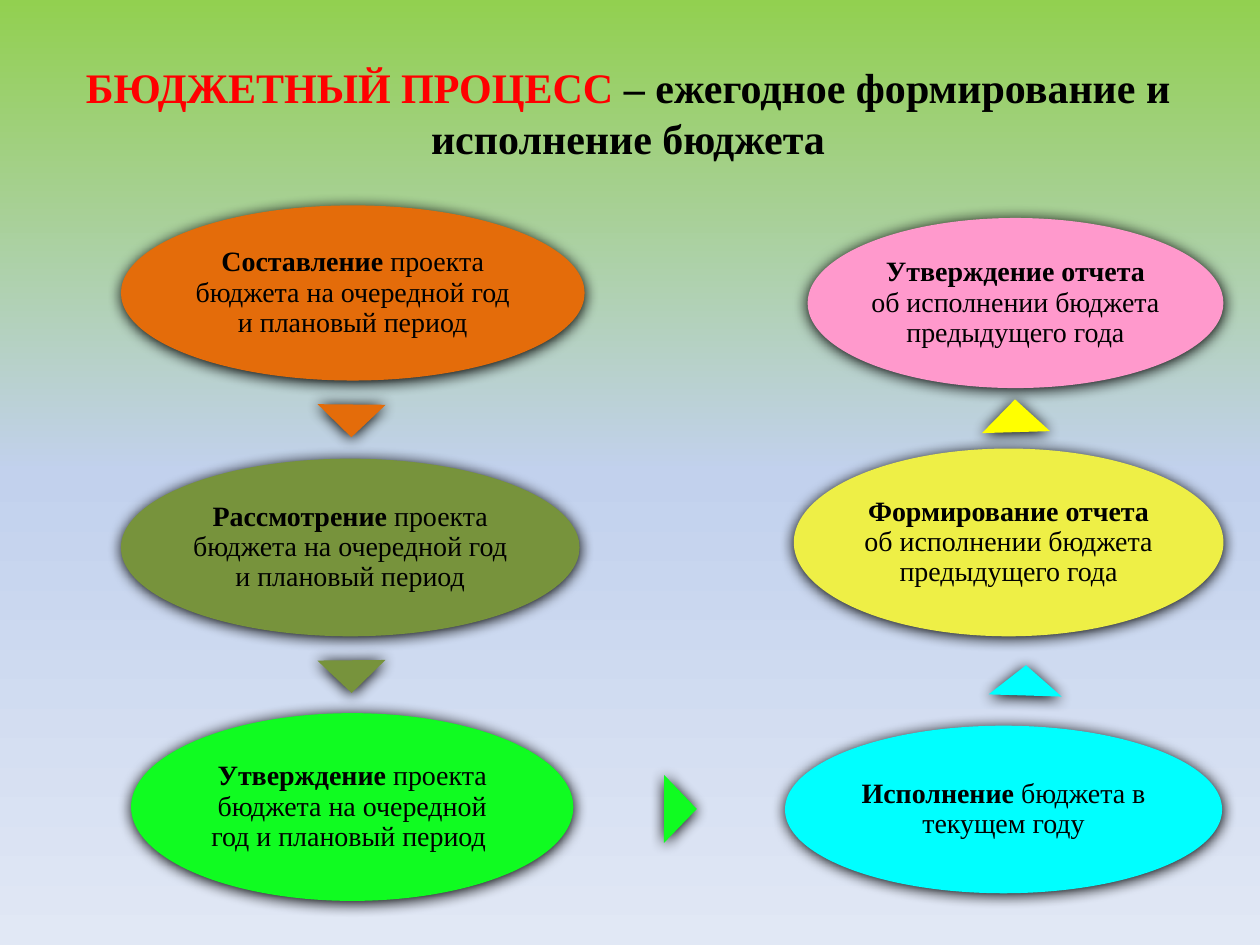
from dataclasses import dataclass

from lxml import etree
from pptx import Presentation
from pptx.dml.color import RGBColor
from pptx.enum.shapes import MSO_SHAPE
from pptx.enum.text import MSO_ANCHOR, MSO_AUTO_SIZE, PP_ALIGN
from pptx.oxml import parse_xml
from pptx.oxml.ns import qn
from pptx.util import Inches, Pt

OVAL = MSO_SHAPE.OVAL
ARROW = MSO_SHAPE.ISOSCELES_TRIANGLE
MIDDLE = MSO_ANCHOR.MIDDLE
CENTER = PP_ALIGN.CENTER
GROW = MSO_AUTO_SIZE.SHAPE_TO_FIT_TEXT
NS = "http://schemas.openxmlformats.org/drawingml/2006/main"


@dataclass(frozen=True)
class Theme:
    font: str = "Times New Roman"
    title: int = 24
    body: int = 16
    red: str = "FF0000"
    black: str = "000000"
    orange: str = "E46C0A"
    olive: str = "77933C"
    green: str = "10FC21"
    cyan: str = "00FFFF"
    lemon: str = "EEEF46"
    yellow: str = "FFFF00"
    pink: str = "FF99CC"
    sky: tuple = ((0, "92D050"), (50, "C2D1ED"), (100, "E1E8F5"))


THEME = Theme()

STAGES = [
    ((0.96, 1.63, 3.68, 1.39), THEME.orange,
     "Составление", " проекта бюджета на очередной год и плановый период"),
    ((0.96, 3.64, 3.64, 1.41), THEME.olive,
     "Рассмотрение ", "проекта бюджета на очередной год и плановый период"),
    ((1.04, 5.66, 3.51, 1.49), THEME.green,
     "Утверждение", " проекта бюджета на очередной год и плановый период "),
    ((6.23, 5.76, 3.47, 1.33), THEME.cyan,
     "Исполнение ", "бюджета в текущем году"),
    ((6.3, 3.56, 3.41, 1.49), THEME.lemon,
     "Формирование отчета ", "об исполнении бюджета предыдущего года"),
    ((6.41, 1.73, 3.3, 1.35), THEME.pink,
     "Утверждение отчета ", "об исполнении бюджета предыдущего года"),
]

ARROWS = [
    ((2.52, 3.21, 0.54, 0.26), 180.5, THEME.orange),
    ((2.52, 5.24, 0.54, 0.26), 179.5, THEME.olive),
    ((5.13, 6.29, 0.54, 0.26), 90.1, THEME.green),
    ((7.85, 5.28, 0.58, 0.24), 1.7, THEME.cyan),
    ((7.79, 3.17, 0.54, 0.26), 358.3, THEME.yellow),
]


def paint_sky(slide):
    fill = slide.background.fill
    fill.gradient()
    fill.gradient_angle = 270
    stops = slide.element.xpath(".//a:gsLst")[0]
    for stop in list(stops):
        stops.remove(stop)
    for place, color in THEME.sky:
        stop = etree.SubElement(stops, qn("a:gs"), pos=str(place * 1000))
        etree.SubElement(stop, qn("a:srgbClr"), val=color)


def add_run(para, text, size, color, bold):
    run = para.add_run()
    run.text = text
    font = run.font
    font.name = THEME.font
    font.size = Pt(size)
    font.bold = bold
    font.color.rgb = RGBColor.from_string(color)


def add_shade(shape):
    shape.shadow.inherit = False
    effects = shape.element.spPr.find(qn("a:effectLst"))
    effects.append(parse_xml(
        f'<a:outerShdw xmlns:a="{NS}" blurRad="{Pt(8.5)}" dist="{Pt(1)}" '
        'dir="5400000" algn="ctr" rotWithShape="0">'
        f'<a:srgbClr val="{THEME.black}"/></a:outerShdw>'))


def add_form(slide, kind, box, color):
    shape = slide.shapes.add_shape(kind, *map(Inches, box))
    shape.fill.solid()
    shape.fill.fore_color.rgb = RGBColor.from_string(color)
    shape.line.fill.background()
    add_shade(shape)
    return shape


def add_stage(slide, box, color, head, rest):
    frame = add_form(slide, OVAL, box, color).text_frame
    frame.word_wrap = True
    frame.vertical_anchor = MIDDLE
    frame.margin_left = frame.margin_right = Inches(0.02)
    frame.margin_top = frame.margin_bottom = Inches(0.02)
    para = frame.paragraphs[0]
    para.alignment = CENTER
    para.line_spacing = 0.9
    add_run(para, head, THEME.body, THEME.black, True)
    add_run(para, rest, THEME.body, THEME.black, False)


def add_arrow(slide, box, turn, color):
    add_form(slide, ARROW, box, color).rotation = turn


def add_title(slide):
    box = map(Inches, (0.26, 0.44, 9.45, 0.91))
    frame = slide.shapes.add_textbox(*box).text_frame
    frame.word_wrap = True
    frame.auto_size = GROW
    para = frame.paragraphs[0]
    para.alignment = CENTER
    add_run(para, "БЮДЖЕТНЫЙ ПРОЦЕСС ", THEME.title, THEME.red, True)
    add_run(para, "– ежегодное формирование и исполнение бюджета",
            THEME.title, THEME.black, True)


def main():
    deck = Presentation()
    deck.slide_width = Inches(10)
    deck.slide_height = Inches(7.5)
    slide = deck.slides.add_slide(deck.slide_layouts[6])
    paint_sky(slide)
    add_title(slide)
    for stage in STAGES:
        add_stage(slide, *stage)
    for arrow in ARROWS:
        add_arrow(slide, *arrow)
    deck.save("out.pptx")


if __name__ == "__main__":
    main()
